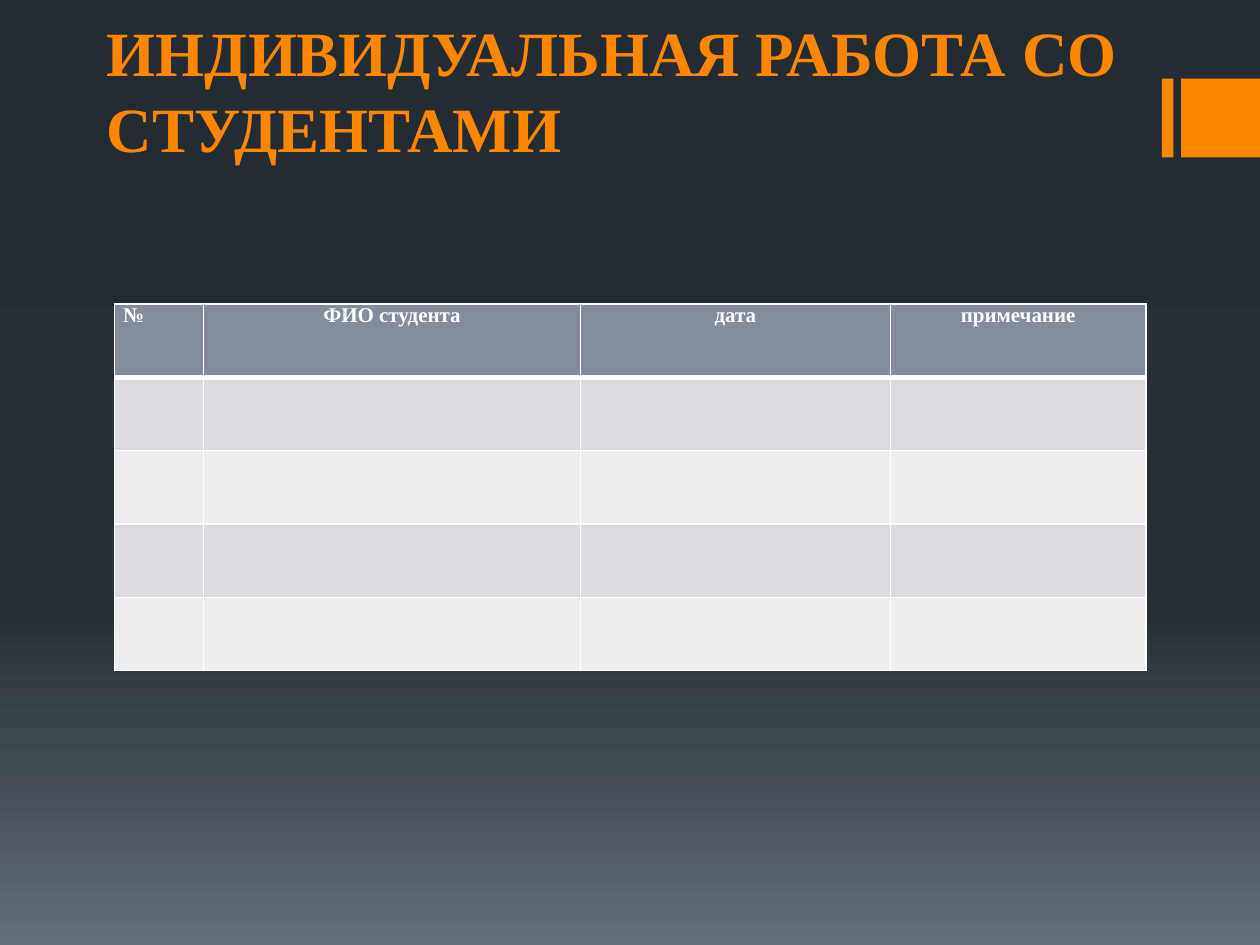
from lxml import etree
from pptx import Presentation
from pptx.dml.color import RGBColor
from pptx.enum import shapes, text
from pptx.oxml.ns import qn
from pptx.util import Pt

ORANGE = RGBColor(0xFF, 0x86, 0x00)
WHITE = RGBColor(0xFF, 0xFF, 0xFF)
HEADER = RGBColor(0x83, 0x8D, 0x9B)
BANDS = (RGBColor(0xD9, 0xDB, 0xDE), RGBColor(0xED, 0xEE, 0xEF))
BACKGROUND = (
    (0, RGBColor(0x24, 0x2C, 0x33)),
    (65, RGBColor(0x27, 0x30, 0x37)),
    (100, RGBColor(0x63, 0x6D, 0x76)),
)
FONT = "Times New Roman"
HEADINGS = ("№", "ФИО студента", "дата", "примечание")
COLUMNS = (51.1, 215.3, 177.1, 146.2)
ROWS = 5


def add_color(parent, color):
    etree.SubElement(parent, qn("a:srgbClr"), val=str(color))


def write(tf, content, size, color, align=text.PP_ALIGN.LEFT, spacing=None):
    p = tf.paragraphs[0]
    p.alignment = align
    if spacing:
        p.line_spacing = Pt(spacing)
    r = p.add_run()
    r.text = content
    r.font.name = FONT
    r.font.size = Pt(size)
    r.font.bold = True
    r.font.color.rgb = color


def paint_background(s):
    fill = s.background.fill
    fill.gradient()
    fill.gradient_angle = 270
    stops = s.background._cSld.find(".//" + qn("a:gsLst"))
    for stop in list(stops):
        stops.remove(stop)
    for percent, color in BACKGROUND:
        add_color(etree.SubElement(stops, qn("a:gs"), pos=str(percent * 1000)), color)


def add_accent(s, left, top, width, height):
    """Thin bar and square block, the block filling the box's right end."""
    for x, w in ((left, 6.5), (left + width - height, height)):
        sp = s.shapes.add_shape(shapes.MSO_SHAPE.RECTANGLE, Pt(x), Pt(top), Pt(w), Pt(height))
        sp.shadow.inherit = False
        sp.fill.solid()
        sp.fill.fore_color.rgb = ORANGE
        sp.line.fill.background()


def add_title(s, left, top, width, height):
    tf = s.shapes.add_textbox(Pt(left), Pt(top), Pt(width), Pt(height)).text_frame
    tf.word_wrap = True
    tf.vertical_anchor = text.MSO_ANCHOR.BOTTOM
    tf.margin_top = 0
    tf.margin_bottom = Pt(45.5)
    write(tf, "ИНДИВИДУАЛЬНАЯ РАБОТА СО СТУДЕНТАМИ", 36, ORANGE, spacing=43)


def style_cell(cell, color, bottom):
    """Fill the cell and give it white borders, the lower one `bottom` points wide."""
    props = cell._tc.get_or_add_tcPr()
    for side, width in (("L", 1), ("R", 1), ("T", 1), ("B", bottom)):
        line = etree.SubElement(props, qn("a:ln" + side), w=str(Pt(width)))
        add_color(etree.SubElement(line, qn("a:solidFill")), WHITE)
    cell.fill.solid()
    cell.fill.fore_color.rgb = color


def add_student_table(s, left, top, width, height):
    table = s.shapes.add_table(
        ROWS, len(COLUMNS), Pt(left), Pt(top), Pt(width), Pt(height)
    ).table
    for column, w in zip(table.columns, COLUMNS):
        column.width = Pt(w)
    for i, row in enumerate(table.rows):
        row.height = Pt(height / ROWS)
        for cell in row.cells:
            style_cell(cell, BANDS[(i - 1) % 2] if i else HEADER, 1 if i else 3)
    for j, heading in enumerate(HEADINGS):
        cell = table.cell(0, j)
        cell.margin_left = cell.margin_right = Pt(5)
        cell.margin_top = cell.margin_bottom = 0
        align = text.PP_ALIGN.CENTER if j else text.PP_ALIGN.LEFT
        write(cell.text_frame, heading, 12, WHITE, align)


def main():
    prs = Presentation()
    prs.slide_width, prs.slide_height = Pt(720), Pt(540)
    s = prs.slides.add_slide(prs.slide_layouts[6])
    paint_background(s)
    add_accent(s, 664, 45, 56, 45)
    add_title(s, 54, 43.2, 612, 96.5)
    add_student_table(s, 65.3, 173.7, sum(COLUMNS), 209.5)
    prs.save("out.pptx")


if __name__ == "__main__":
    main()
